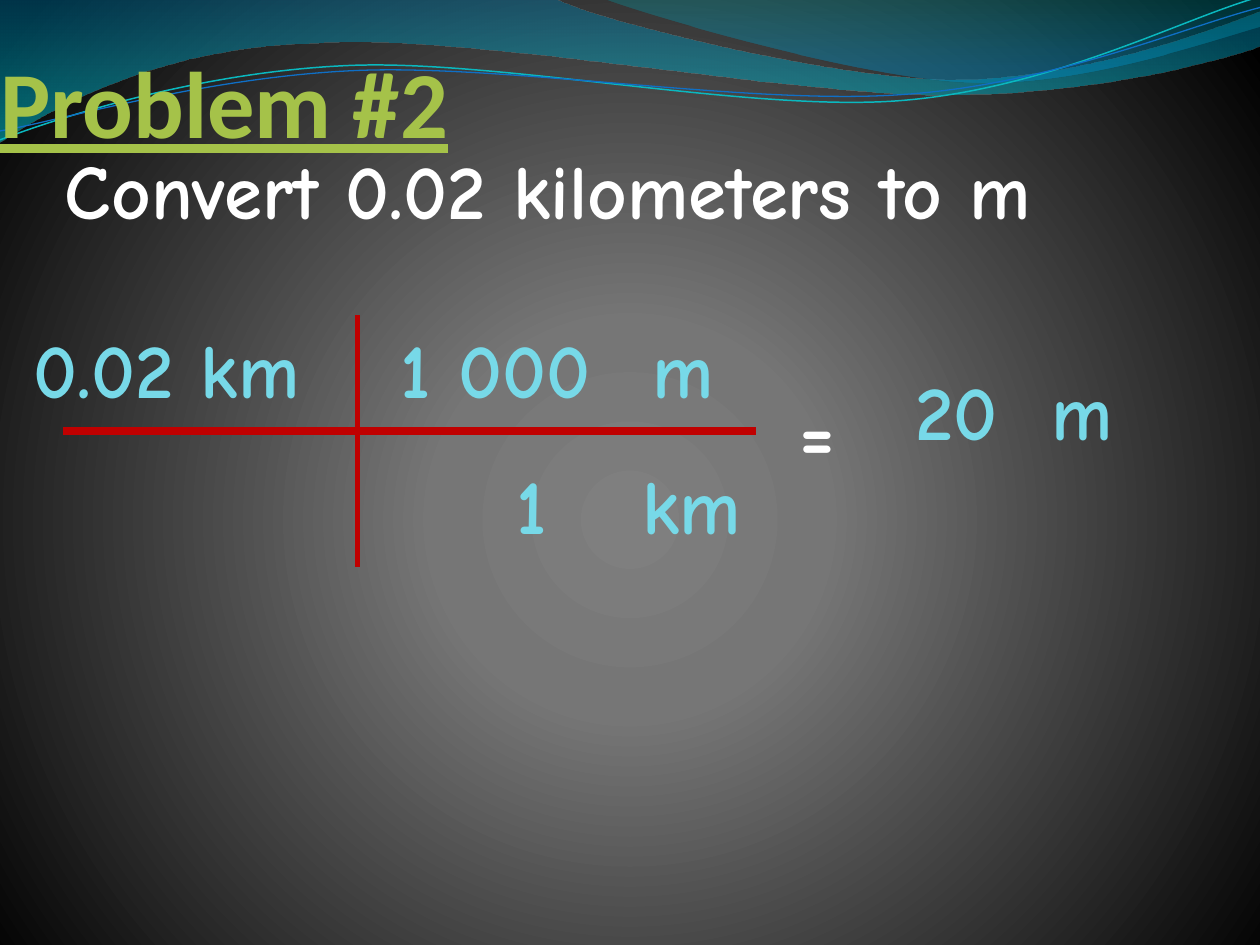
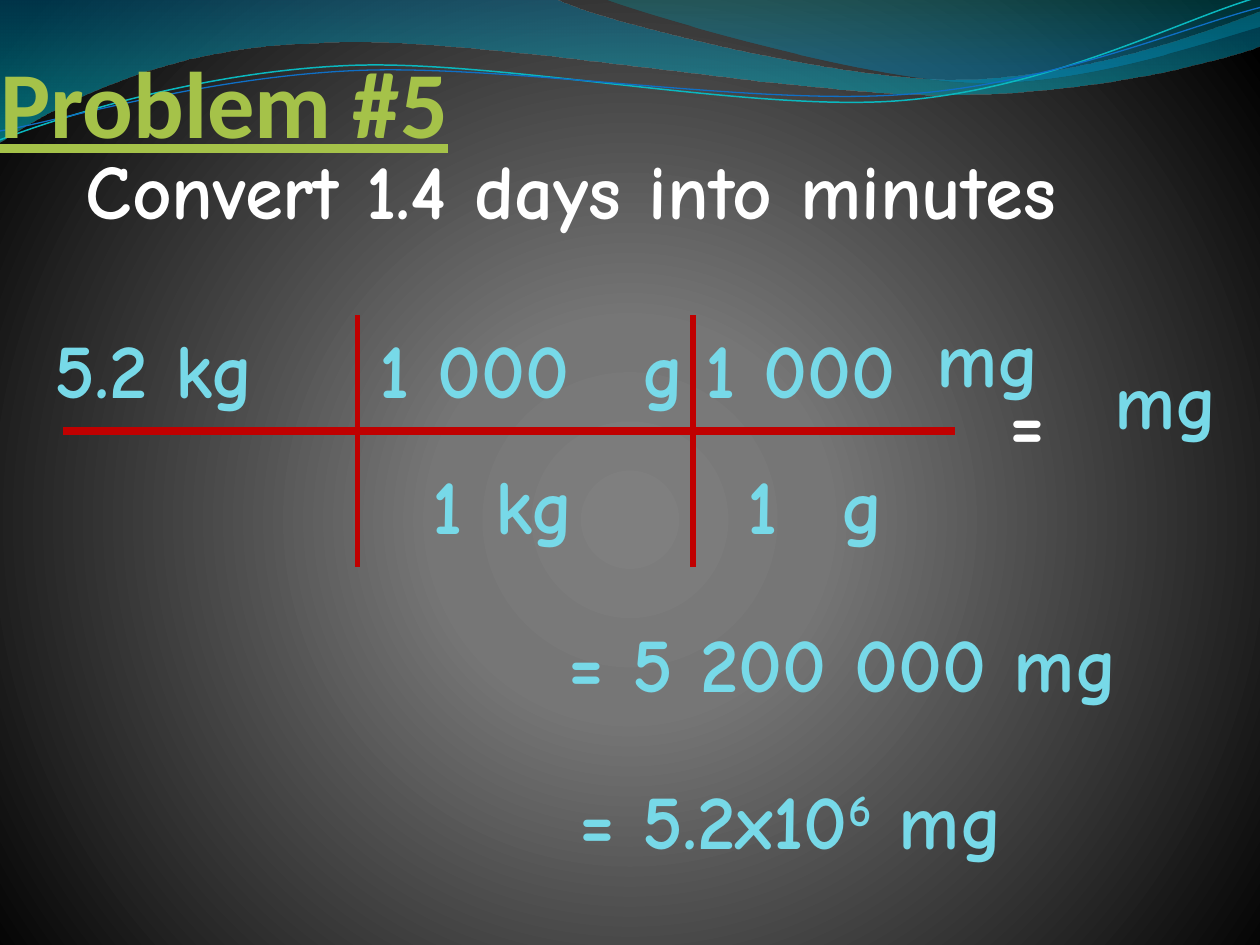
from math import cos, radians, sin

from pptx import Presentation
from pptx.dml.color import RGBColor
from pptx.enum.shapes import MSO_CONNECTOR
from pptx.enum.text import MSO_ANCHOR, MSO_AUTO_SIZE, PP_ALIGN
from pptx.oxml import parse_xml
from pptx.oxml.ns import nsdecls, qn
from pptx.util import Cm, Pt
from lxml.etree import SubElement

WHITE, CYAN, GREEN, RED = "FFFFFF", "77D9E8", "A5C249", "C00000"
TITLE_FONT, BODY_FONT = "Calibri", "Comic Neue"
UNIT = Cm(2.54)
TEXT_HEIGHT = 2.13
QUESTION_TOP, NUMERATOR_TOP, DENOMINATOR_TOP = 2.75, 6.35, 9.1
BAR_LEFT, BAR_Y, DIVIDER_BOTTOM = 1.27, 8.68, 11.43
STRAND_TILT = -2.7

DOWN = '<a:lin ang="5400000" scaled="0"/>'
GLOW = ('<a:path path="circle">'
        '<a:fillToRect l="10000" t="110000" r="10000" b="100000"/></a:path>')
BACKDROP = [(0, "7F7F7F", 100), (25, "767676", 100), (100, "000000", 100)]

BANDS = [
    ([(0, "0074A1", 45), (100, "00C6CF", 55)], [
        (0, 0),
        (4.4, -0.01),
        (4.76, 0.17, 6.64, 0.63, 7.58, 0.63),
        (8.53, 0.63, 9.58, 0.26, 10, 0.09),
        (10.01, 0.36),
        (9.83, 0.44, 8.7, 0.76, 7.46, 0.75),
        (6.22, 0.75, 3.82, 0.28, 2.57, 0.34),
        (1.29, 0.36, 0.46, 0.83, -0.01, 1.13),
        (0, 0)]),
    ([(0, "00A1A9", 30), (80, "008BBF", 45)], [
        (4.79, -0.01),
        (5.09, 0.11, 6.82, 0.62, 7.69, 0.65),
        (8.56, 0.69, 9.61, 0.32, 10, 0.21),
        (10, 0),
        (4.79, -0.01)]),
]
STRANDS = [
    ("0AB8BF", 0.85, (4.99, 0.57), [
        (0, 1.11),
        (0.48, 0.93, 1.58, 0.57, 2.77, 0.52),
        (3.95, 0.47, 5.93, 0.89, 7.13, 0.8),
        (8.33, 0.71, 9.38, 0.15, 9.98, -0.02)]),
    ("0F6FC6", 0.75, (5, 0.58), [
        (0, 1.04),
        (0.47, 0.96, 1.64, 0.61, 2.83, 0.56),
        (4.03, 0.51, 5.97, 0.84, 7.17, 0.75),
        (8.36, 0.67, 9.41, 0.21, 10, 0.06)]),
]


def color(value):
    return RGBColor.from_string(value)


def set_gradient(fill, element, stops, direction):
    fill.gradient()
    old = next(element.iter(qn("a:gradFill")))
    gs = "".join(
        f'<a:gs pos="{pos * 1000}"><a:srgbClr val="{value}">'
        f'<a:alpha val="{alpha * 1000}"/></a:srgbClr></a:gs>'
        for pos, value, alpha in stops)
    new = parse_xml(f'<a:gradFill {nsdecls("a")} rotWithShape="1">'
                    f'<a:gsLst>{gs}</a:gsLst>{direction}</a:gradFill>')
    old.getparent().replace(old, new)


def scaled_points(step, center, angle):
    cx, cy = center
    c, n = cos(radians(angle)), sin(radians(angle))
    pairs = [(x - cx, y - cy) for x, y in zip(step[::2], step[1::2])]
    return [(round((cx + x * c + y * n) * UNIT), round((cy + y * c - x * n) * UNIT))
            for x, y in pairs]


def add_wave(s, steps, close, center=(0, 0), angle=0):
    steps = [scaled_points(step, center, angle) for step in steps]
    ends = [step[-1] for step in steps]
    builder = s.shapes.build_freeform(*ends[0])
    builder.add_line_segments(ends[1:], close=close)
    sp = builder.convert_to_shape()
    left, top = (min(values) for values in zip(*ends))
    for line, step in zip(list(sp.element.iter(qn("a:lnTo"))), steps[1:]):
        if len(step) == 3:
            pts = "".join(f'<a:pt x="{x - left}" y="{y - top}"/>' for x, y in step)
            curve = parse_xml(f'<a:cubicBezTo {nsdecls("a")}>{pts}</a:cubicBezTo>')
            line.getparent().replace(line, curve)
    sp.rotation = angle
    sp.shadow.inherit = False
    return sp


def decorate_master(prs, s):
    master = prs.slide_master
    set_gradient(master.background.fill, master.element, BACKDROP, GLOW)
    waves = []
    for stops, steps in BANDS:
        sp = add_wave(s, steps, True)
        set_gradient(sp.fill, sp.element, stops, DOWN)
        sp.line.fill.background()
        waves.append(sp)
    for value, width, center, steps in STRANDS:
        sp = add_wave(s, steps, False, center, STRAND_TILT)
        sp.fill.background()
        sp.line.color.rgb = color(value)
        sp.line.width = Pt(width)
        waves.append(sp)
    for i, sp in enumerate(waves):
        sp.element.nvSpPr.cNvPr.set("id", str(20 + i))
        master.element.cSld.spTree.insert(2 + i, sp.element)


def style_run(r, font, size, value):
    r.font.name = font
    r.font.size = Pt(size)
    r.font.bold = True
    r.font.color.rgb = color(value)


def set_title(s, text):
    sp = s.shapes.title
    sp.left, sp.top, sp.width, sp.height = Cm(0), Cm(0), Cm(22.86), Cm(3.18)
    tf = sp.text_frame
    tf.text = text
    tf.auto_size = MSO_AUTO_SIZE.NONE
    tf.vertical_anchor = MSO_ANCHOR.BOTTOM
    tf.margin_left = tf.margin_right = tf.margin_bottom = 0
    tf.margin_top = Cm(0.13)
    p = tf.paragraphs[0]
    p.alignment = PP_ALIGN.LEFT
    style_run(p.runs[0], TITLE_FONT, 54, GREEN)
    p.runs[0].font.underline = True


def add_text(s, text, left, top, width, value=CYAN):
    sp = s.shapes.add_textbox(Cm(left), Cm(top), Cm(width), Cm(TEXT_HEIGHT))
    tf = sp.text_frame
    tf.word_wrap = True
    tf.auto_size = MSO_AUTO_SIZE.SHAPE_TO_FIT_TEXT
    tf.text = text
    p = tf.paragraphs[0]
    style_run(p.runs[0], BODY_FONT, 44, value)
    return p


def add_power(p, exponent, unit):
    for text, baseline in ((exponent, 30000), (unit, 0)):
        r = p.add_run()
        r.text = text
        style_run(r, BODY_FONT, 44, CYAN)
        r.font._element.set("baseline", str(baseline))


def add_rule(s, x1, y1, x2, y2, width):
    line = s.shapes.add_connector(MSO_CONNECTOR.STRAIGHT, Cm(x1), Cm(y1), Cm(x2), Cm(y2))
    line.line.color.rgb = color(RED)
    line.line.width = Pt(width)
    SubElement(line.element.spPr, qn("a:effectLst"))


def add_fraction_grid(s, bar_right, dividers):
    add_rule(s, BAR_LEFT, BAR_Y, bar_right, BAR_Y, 4.5)
    for x in dividers:
        add_rule(s, x, NUMERATOR_TOP, x, DIVIDER_BOTTOM, 3)


def add_row(s, top, cells):
    for text, left, width in cells:
        add_text(s, text, left, top, width)


def add_problem(prs, title, question, question_left, bar_right, dividers,
                numerators, denominators):
    s = prs.slides.add_slide(prs.slide_layouts[5])
    set_title(s, title)
    add_text(s, question, question_left, QUESTION_TOP, 23.5, WHITE)
    add_fraction_grid(s, bar_right, dividers)
    add_row(s, NUMERATOR_TOP, numerators)
    add_row(s, DENOMINATOR_TOP, denominators)
    return s


def main():
    prs = Presentation()
    prs.slide_width, prs.slide_height = Cm(25.4), Cm(19.05)

    s = add_problem(
        prs, "Problem #2", "Convert 0.02 kilometers to m", 1.06, 15.24, [7.2],
        [("0.02 km", 0.42, 6.81), ("1 000", 7.83, 5.03), ("m", 12.91, 2.97)],
        [("1", 10.16, 1.47), ("km", 12.7, 2.57)])
    add_text(s, "=", 15.87, 7.62, 1.47, WHITE)
    add_row(s, 7.2, [("20", 18.2, 2.44), ("m", 20.95, 3.18)])
    decorate_master(prs, s)

    s = add_problem(
        prs, "Problem #5", "Convert 1.4 days into minutes", 1.48, 19.26, [7.2, 13.97],
        [("5.2 kg", 0.85, 5.46), ("1 000", 7.41, 5.03), ("g", 12.7, 2.97),
         ("1 000", 13.97, 5.03)],
        [("1", 8.47, 1.47), ("kg", 9.74, 2.18), ("1", 14.82, 1.47), ("g", 16.72, 2.97)])
    add_text(s, "mg", 18.63, 6.14, 2.97)
    add_text(s, "=", 20.11, 7.41, 1.47, WHITE)
    add_text(s, "mg", 22.22, 6.99, 3.18)
    add_text(s, "= 5 200 000 mg", 11.22, 12.28, 13.54)
    add_power(add_text(s, "= 5.2x10", 11.43, 15.45, 10.95), "6", " mg")

    prs.save("out.pptx")


if __name__ == "__main__":
    main()
